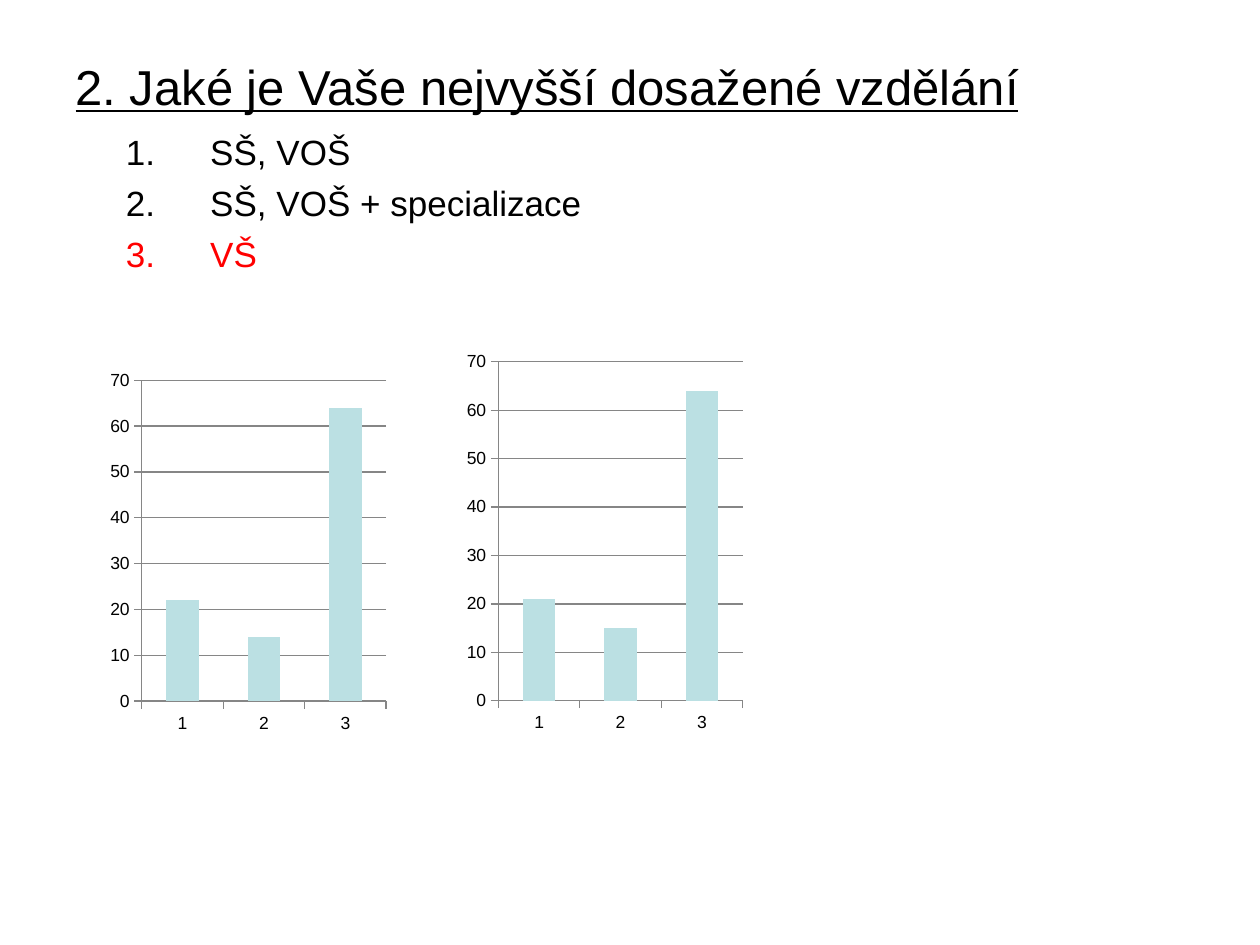
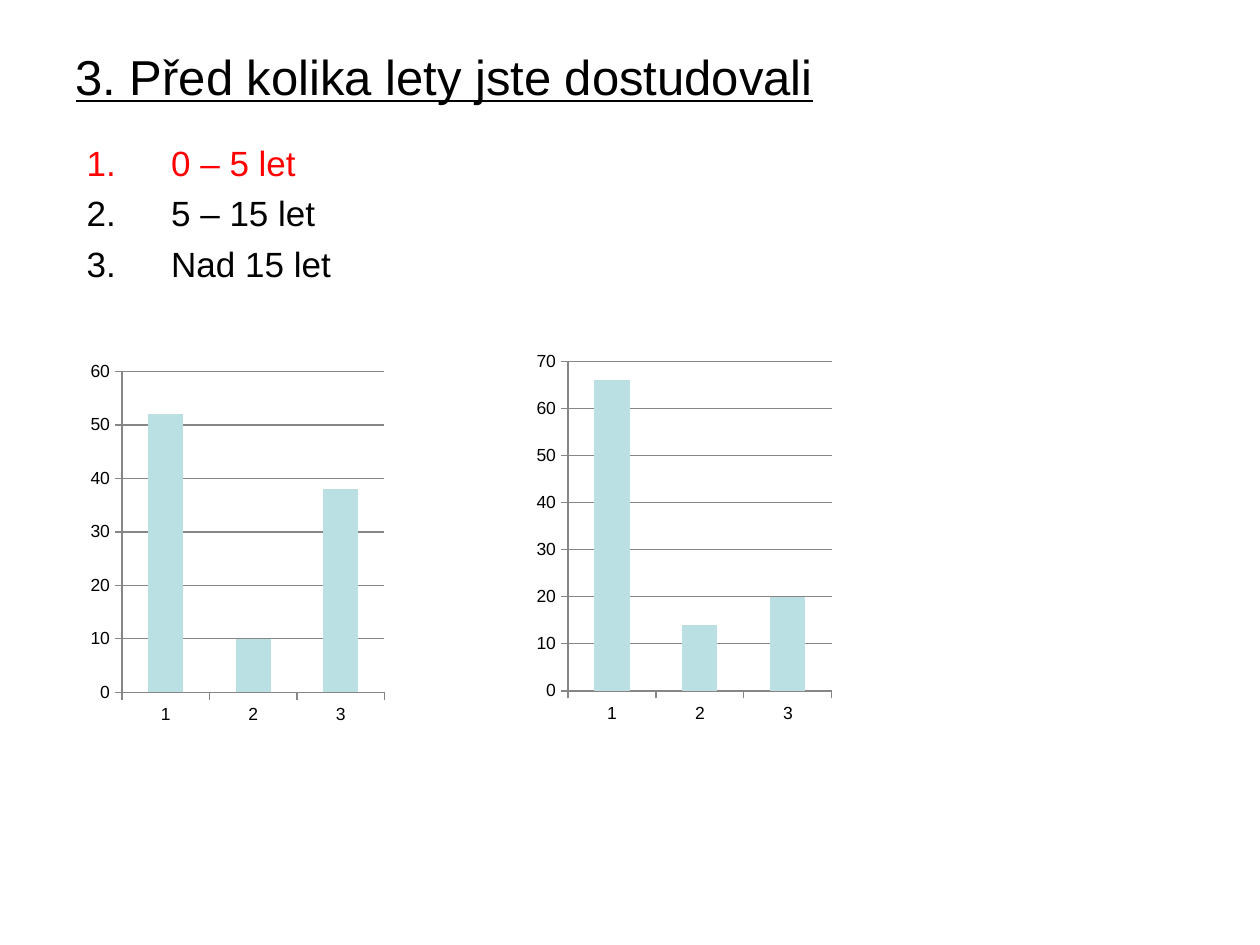
from dataclasses import dataclass

from pptx import Presentation
from pptx.chart.data import CategoryChartData
from pptx.dml.color import RGBColor
from pptx.enum.chart import XL_CHART_TYPE, XL_TICK_MARK
from pptx.enum.text import MSO_ANCHOR, PP_ALIGN
from pptx.oxml.ns import qn
from pptx.util import Inches, Pt


@dataclass(frozen=True)
class Theme:
    font: str = "Arial"
    text: RGBColor = RGBColor(0x00, 0x00, 0x00)
    highlight: RGBColor = RGBColor(0xFF, 0x00, 0x00)
    bar: RGBColor = RGBColor(0xBB, 0xE0, 0xE3)
    axis: RGBColor = RGBColor(0x86, 0x86, 0x86)
    title_size: Pt = Pt(28)
    answer_size: Pt = Pt(20)
    chart_size: Pt = Pt(10)
    answer_gap: Pt = Pt(5)
    answer_indent: Inches = Inches(0.67)


THEME = Theme()
TITLE_ONLY = 5

QUESTIONS = [
    dict(
        title="2. Jaké je Vaše nejvyšší dosažené vzdělání",
        title_height=0.77,
        answers=["SŠ, VOŠ", "SŠ, VOŠ + specializace", "VŠ"],
        highlighted=2,
        answers_box=(0.9, 0.99, 7.88, 1.26),
        charts=[
            ((0.83, 2.88, 2.28, 3), (22, 14, 64)),
            ((3.66, 2.73, 2.28, 3.15), (21, 15, 64)),
        ],
    ),
    dict(
        title="3. Před kolika lety jste dostudovali",
        title_height=0.61,
        answers=["0 – 5 let", "5 – 15 let", "Nad 15 let"],
        highlighted=0,
        answers_box=(0.59, 1.07, 4.5, 1.34),
        charts=[
            ((4.21, 2.73, 2.44, 3.07), (66, 14, 20)),
            ((0.67, 2.81, 2.43, 3), (52, 10, 38)),
        ],
    ),
]


def inches(box):
    return [Inches(length) for length in box]


def write(paragraph, text, size, color=THEME.text, underline=None):
    paragraph.alignment = PP_ALIGN.LEFT
    run = paragraph.add_run()
    run.text = text
    run.font.name = THEME.font
    run.font.size = size
    run.font.color.rgb = color
    run.font.underline = underline


def number(paragraph):
    """Give the paragraph automatic numbering with a hanging indent."""
    properties = paragraph._p.get_or_add_pPr()
    properties.set("marL", str(THEME.answer_indent))
    properties.set("indent", str(-THEME.answer_indent))
    numbering = properties.makeelement(qn("a:buAutoNum"), {"type": "arabicPeriod"})
    properties.append(numbering)


def set_title(slide, text, height):
    title = slide.shapes.title
    title.left, title.top, title.width, title.height = inches((0.5, 0.3, 9, height))
    title.text_frame.vertical_anchor = MSO_ANCHOR.MIDDLE
    write(title.text_frame.paragraphs[0], text, THEME.title_size, underline=True)


def add_answers(slide, answers, highlighted, box):
    frame = slide.shapes.add_textbox(*inches(box)).text_frame
    frame.word_wrap = True
    for index, answer in enumerate(answers):
        paragraph = frame.add_paragraph() if index else frame.paragraphs[0]
        paragraph.space_before = THEME.answer_gap
        number(paragraph)
        color = THEME.highlight if index == highlighted else THEME.text
        write(paragraph, answer, THEME.answer_size, color=color)


def style_line(line):
    line.color.rgb = THEME.axis
    line.width = Pt(0.75)


def add_answer_chart(slide, box, shares):
    data = CategoryChartData()
    data.categories = [str(i) for i in range(1, len(shares) + 1)]
    data.add_series("Series 1", shares)
    chart = slide.shapes.add_chart(
        XL_CHART_TYPE.COLUMN_CLUSTERED, *inches(box), data
    ).chart
    chart.has_title = False
    chart.has_legend = False
    chart.font.name = THEME.font
    chart.font.size = THEME.chart_size
    chart.font.color.rgb = THEME.text

    for axis in (chart.category_axis, chart.value_axis):
        axis.major_tick_mark = XL_TICK_MARK.OUTSIDE
        axis.minor_tick_mark = XL_TICK_MARK.NONE
        style_line(axis.format.line)
    chart.value_axis.has_major_gridlines = True
    style_line(chart.value_axis.major_gridlines.format.line)

    columns = chart.plots[0]
    columns.gap_width = 150
    columns.vary_by_categories = False
    fill = columns.series[0].format.fill
    fill.solid()
    fill.fore_color.rgb = THEME.bar


def add_question_slide(deck, question):
    slide = deck.slides.add_slide(deck.slide_layouts[TITLE_ONLY])
    set_title(slide, question["title"], question["title_height"])
    add_answers(
        slide, question["answers"], question["highlighted"], question["answers_box"]
    )
    for box, shares in question["charts"]:
        add_answer_chart(slide, box, shares)


def main():
    deck = Presentation()
    deck.slide_width, deck.slide_height = Inches(10), Inches(7.5)
    for question in QUESTIONS:
        add_question_slide(deck, question)
    deck.save("out.pptx")


if __name__ == "__main__":
    main()
